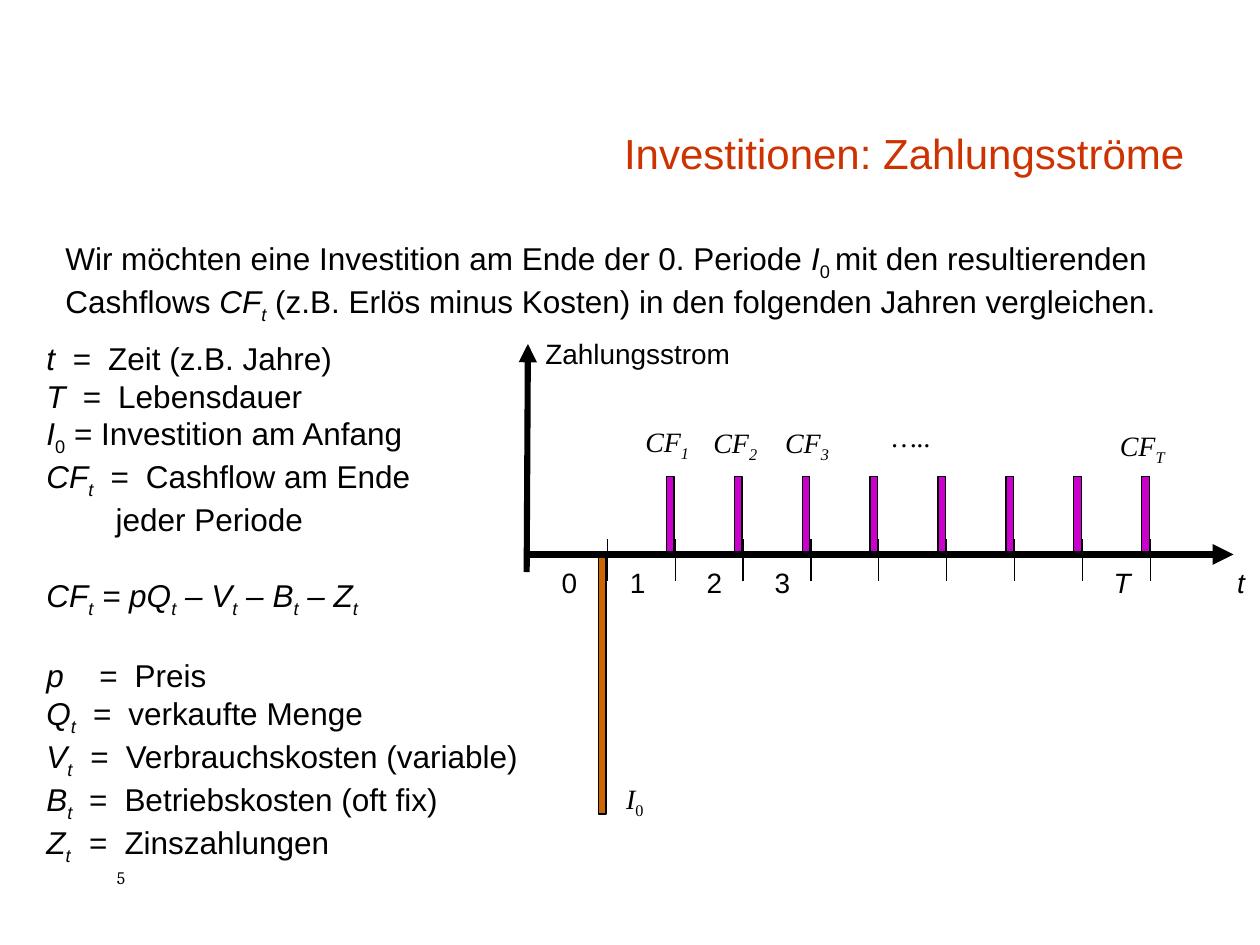
from dataclasses import dataclass

from lxml import etree
from pptx import Presentation
from pptx.dml.color import RGBColor
from pptx.enum.shapes import MSO_CONNECTOR, MSO_SHAPE
from pptx.enum.text import MSO_ANCHOR, MSO_AUTO_SIZE, PP_ALIGN
from pptx.oxml.ns import qn
from pptx.util import Inches, Pt

LEFT, CENTER, RIGHT = PP_ALIGN.LEFT, PP_ALIGN.CENTER, PP_ALIGN.RIGHT
TOP, BOTTOM = MSO_ANCHOR.TOP, MSO_ANCHOR.BOTTOM
NO_FIT = MSO_AUTO_SIZE.NONE
RECTANGLE, STRAIGHT = MSO_SHAPE.RECTANGLE, MSO_CONNECTOR.STRAIGHT


@dataclass(frozen=True)
class Theme:
    sans: str = "Arial"
    serif: str = "Times New Roman"
    number_font: str = "Cambria"
    ink: RGBColor = RGBColor(0, 0, 0)
    title: RGBColor = RGBColor(0xCC, 0x33, 0x00)
    outlay: RGBColor = RGBColor(0xCC, 0x66, 0x00)
    cashflow: RGBColor = RGBColor(0xCC, 0x00, 0xCC)
    title_size: int = 24
    body_size: int = 18
    label_size: int = 16
    number_size: int = 10
    thin: float = 0.75


THEME = Theme()


@dataclass(frozen=True)
class Box:
    """A rectangle in inches."""
    left: float
    top: float
    width: float
    height: float

    def inner(self, x, y, width, height):
        return Box(self.left + x, self.top + y, width, height)

    def lengths(self):
        return [Inches(v) for v in (self.left, self.top, self.width, self.height)]


def write(para, spans, *, font=THEME.sans, size=THEME.body_size, color=THEME.ink,
          align=LEFT):
    """Add spans (text, style); style holds i for italic and s for subscript."""
    para.alignment = align
    for text, style in spans:
        span = para.add_run()
        span.text = text
        span.font.name, span.font.size = font, Pt(size)
        span.font.color.rgb = color
        span.font.italic = "i" in style
        if "s" in style:
            span.font._element.set("baseline", "-25000")


def add_frame(page, box):
    frame = page.shapes.add_textbox(*box.lengths()).text_frame
    frame.word_wrap = True
    frame.vertical_anchor = TOP
    return frame


def add_text(page, box, spans, **style):
    write(add_frame(page, box).paragraphs[0], spans, **style)


def add_bar(page, box, color):
    bar = page.shapes.add_shape(RECTANGLE, *box.lengths())
    bar.shadow.inherit = False
    bar.fill.solid()
    bar.fill.fore_color.rgb = color
    bar.line.color.rgb = THEME.ink
    bar.line.width = Pt(THEME.thin)


def add_line(page, box, start, end, width=THEME.thin, arrow=False):
    points = [Inches(v) for x, y in (start, end) for v in (box.left + x, box.top + y)]
    line = page.shapes.add_connector(STRAIGHT, *points)
    line.line.color.rgb = THEME.ink
    line.line.width = Pt(width)
    if arrow:
        etree.SubElement(line.line._get_or_add_ln(), qn("a:tailEnd"), type="triangle")
    etree.SubElement(line._element.spPr, qn("a:effectLst"))


def set_tabs(para, *stops):
    tabs = etree.SubElement(para._p.get_or_add_pPr(), qn("a:tabLst"))
    for stop in stops:
        etree.SubElement(tabs, qn("a:tab"), pos=str(Inches(stop)), algn="l")


def place_title(page, box, text):
    title = page.shapes.title
    title.left, title.top, title.width, title.height = box.lengths()
    frame = title.text_frame
    frame.auto_size = NO_FIT
    frame.word_wrap = True
    frame.vertical_anchor = BOTTOM
    para = frame.paragraphs[0]
    para.line_spacing = 0.9
    write(para, [(text, "")], size=THEME.title_size, color=THEME.title, align=RIGHT)


def place_intro(page, box):
    add_text(page, box, [
        ("Wir möchten eine Investition am Ende der 0. Periode ", ""),
        ("I", "i"), ("0 ", "s"),
        ("mit den resultierenden Cashflows ", ""),
        ("CF", "i"), ("t", "is"),
        (" (z.B. Erlös minus Kosten) in den folgenden Jahren vergleichen.", "")])


def place_definitions(page, box):
    frame = add_frame(page, box)
    gap = Pt(21.5)

    def next_para():
        first = frame.paragraphs[0]
        return frame.add_paragraph() if first.runs else first

    def define(symbol, index, equals_at, meaning):
        para = next_para()
        set_tabs(para, equals_at, equals_at + 0.28)
        spans = [(symbol, "i"), (index, "is"), (f"\t=\t{meaning}", "")]
        write(para, [span for span in spans if span[0]])

    # Symbols of the time line
    define("t", "", 0.21, "Zeit (z.B. Jahre)")
    define("T", "", 0.29, "Lebensdauer")
    write(next_para(), [("I", "i"), ("0", "s"), (" = Investition am Anfang", "")])
    define("CF", "t", 0.51, "Cashflow am Ende")
    continued = next_para()
    continued._p.get_or_add_pPr().set("marL", str(Inches(0.55)))
    write(continued, [("jeder Periode", "")])

    # Cash flow formula
    formula = next_para()
    formula.space_before = formula.space_after = gap
    terms = ("CF", " = pQ", " – V", " – B", " – Z")
    write(formula, [span for term in terms for span in ((term, "i"), ("t", "is"))])

    # Symbols of the formula
    define("p", "", 0.42, "Preis")
    define("Q", "t", 0.37, "verkaufte Menge")
    define("V", "t", 0.35, "Verbrauchskosten (variable)")
    define("B", "t", 0.34, "Betriebskosten (oft fix)")
    define("Z", "t", 0.34, "Zinszahlungen")


def place_timeline(page, box):
    axis_y, periods = 1.78, 8
    step = 4.31 / periods
    label = {"size": THEME.label_size}
    symbol = {"size": THEME.label_size, "font": THEME.serif}

    # Outlay and cash flow bars
    add_bar(page, box.inner(0.57, axis_y - 0.02, 0.06, 2.08), THEME.outlay)
    for period in range(periods):
        bar_box = box.inner(1.11 + period * step, axis_y - 0.62, 0.06, 0.62)
        add_bar(page, bar_box, THEME.cashflow)

    # Period marks and axes
    for mark in range(periods + 1):
        x = 0.64 + mark * step
        add_line(page, box, (x, axis_y - 0.12), (x, axis_y + 0.21))
    add_line(page, box, (0, axis_y), (5.61, axis_y), width=4, arrow=True)
    add_line(page, box, (0, axis_y + 0.14), (0.01, 0.11), width=3.5, arrow=True)

    # Axis names and period numbers
    add_text(page, box.inner(0.05, 0, 2.41, 0.36), [("Zahlungsstrom", "")], **label)
    for text, x, style in (("0", 0.18, ""), ("1", 0.72, ""), ("2", 1.33, ""),
                           ("3", 1.87, ""), ("T", 4.56, "i"), ("t", 5.54, "i")):
        add_text(page, box.inner(x, 1.82, 0.44, 0.36), [(text, style)], **label)

    # Bar labels
    for index, x, y in (("1", 0.81, 0.7), ("2", 1.35, 0.71),
                        ("3", 1.92, 0.71), ("T", 4.58, 0.73)):
        add_text(page, box.inner(x, y, 0.61, 0.4), [("CF", "i"), (index, "is")],
                 align=CENTER, **symbol)
    add_text(page, box.inner(2.75, 0.66, 0.61, 0.36), [("…..", "i")],
             align=CENTER, **symbol)
    add_text(page, box.inner(0.69, 3.53, 0.52, 0.4), [("I", "i"), ("0", "s")], **symbol)


def place_page_number(page, box, number):
    add_text(page, box, [(number, "")], font=THEME.number_font, size=THEME.number_size)


def main():
    deck = Presentation()
    deck.slide_width, deck.slide_height = Inches(10), Inches(7.5)
    page = deck.slides.add_slide(deck.slide_layouts[5])
    place_title(page, Box(2.09, 0.42, 7.41, 1.05), "Investitionen: Zahlungsströme")
    place_intro(page, Box(0.42, 1.85, 8.95, 0.78))
    place_definitions(page, Box(0.27, 2.64, 4.03, 4.28))
    place_timeline(page, Box(4.18, 2.62, 5.98, 3.93))
    place_page_number(page, Box(0.83, 6.83, 0.67, 0.29), "5")
    deck.save("out.pptx")


if __name__ == "__main__":
    main()
